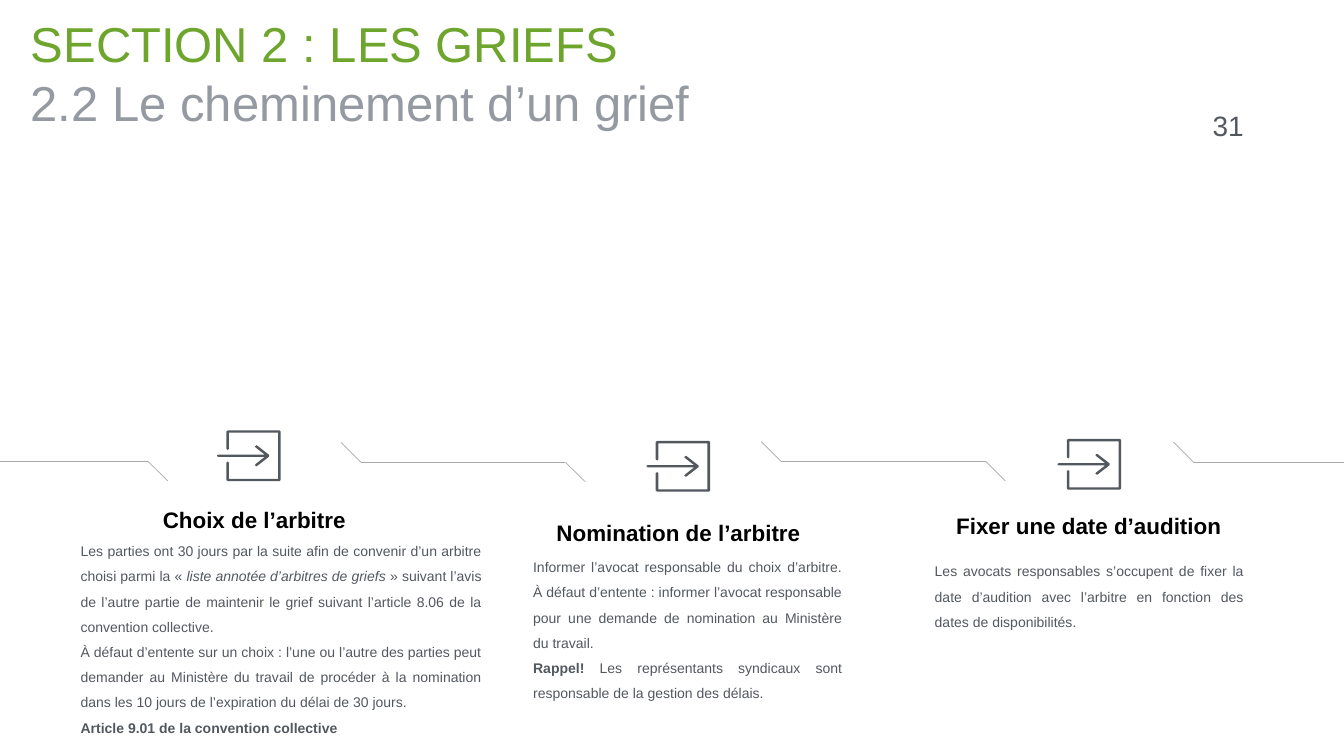
from pptx import Presentation
from pptx.dml.color import RGBColor
from pptx.enum.shapes import MSO_CONNECTOR
from pptx.enum.text import MSO_ANCHOR, MSO_AUTO_SIZE, PP_ALIGN
from pptx.oxml.ns import qn
from pptx.util import Cm, Pt
from lxml.etree import SubElement

GREEN, GREY, DARK, BLACK, RULE = "6DA52D", "959AA2", "53585F", "000000", "A6AAA9"
INSET = 0.15

TITLE = [("SECTION 2 : LES GRIEFS", GREEN), ("2.2 Le cheminement d’un grief", GREY)]
PAGE_NUMBER = "31"

STEPS = [
    {
        "heading": "Choix de l’arbitre",
        "heading_box": (4.88, 24.84, 15.88, 2.64),
        "details_box": (3.91, 28.58, 20.52, 6.86),
        "icon": (10.95, 22.97),
        "details": [
            [("Les parties ont 30 jours par la suite afin de convenir d’un arbitre choisi parmi la « ", ""),
             ("liste annotée d’arbitres de griefs ", "italic"),
             ("» suivant l’avis de l’autre partie de maintenir le grief suivant "
              "l’article 8.06 de la convention collective.", "")],
            [("À défaut d’entente sur un choix : l’une ou l’autre des parties peut demander "
              "au Ministère du travail de procéder à la nomination dans les 10 jours "
              "de l’expiration du délai de 30 jours.", "")],
            [("Article 9.01 de la convention collective", "bold")],
        ],
    },
    {
        "heading": "Nomination de l’arbitre",
        "heading_box": (26.26, 25.5, 15.88, 2.64),
        "details_box": (26.72, 28.52, 15.88, 6.05),
        "icon": (32.59, 23.5),
        "details": [
            [("Informer l’avocat responsable du choix d’arbitre. À défaut d’entente : "
              "informer l’avocat responsable pour une demande de nomination "
              "au Ministère du travail.", "")],
            [("Rappel! ", "bold"),
             ("Les représentants syndicaux sont responsable de la gestion des délais.", "")],
        ],
    },
    {
        "heading": "Fixer une date d’audition",
        "heading_box": (46.94, 25.17, 15.88, 2.64),
        "details_box": (46.96, 27.74, 15.88, 4.22),
        "icon": (53.31, 23.4),
        "details": [
            [("Les avocats responsables s’occupent de fixer la date d’audition avec "
              "l’arbitre en fonction des dates de disponibilités.", "")],
        ],
    },
]

TIMELINE = [
    [(0, 23.25), (7.46, 23.25), (8.46, 24.24)],
    [(17.19, 22.3), (18.19, 23.3), (28.5, 23.3), (29.5, 24.28)],
    [(38.36, 22.25), (39.36, 23.25), (49.68, 23.25), (50.67, 24.24)],
    [(59.14, 22.28), (60.14, 23.28), (67.74, 23.28)],
]

ARROW_TOP = [(0, -0.03), (0.08, -0.06), (2.39, -0.06), (1.93, -0.42), (1.9, -0.47),
             (1.98, -0.53), (2.03, -0.5), (2.62, -0.04)]
FRAME_TOP = [(3.2, -1.22), (3.14, -1.28), (0.53, -1.28), (0.46, -1.22), (0.46, -0.35),
             (0.53, -0.29), (0.59, -0.35), (0.59, -1.16), (3.07, -1.16)]


def color(hex_string):
    return RGBColor.from_string(hex_string)


def place(shape, box):
    shape.left, shape.top, shape.width, shape.height = map(Cm, box)


def set_frame(shape, anchor, inset, wrap=True):
    frame = shape.text_frame
    frame.word_wrap = wrap
    frame.auto_size = MSO_AUTO_SIZE.NONE
    frame.vertical_anchor = anchor
    frame.margin_left = frame.margin_right = Cm(inset)
    frame.margin_top = frame.margin_bottom = Cm(inset)
    return frame


def write(frame, paragraphs, size, hex_string, align, spacing=1.0, bold=None):
    for index, runs in enumerate(paragraphs):
        paragraph = frame.add_paragraph() if index else frame.paragraphs[0]
        paragraph.alignment = align
        paragraph.line_spacing = spacing
        paragraph.space_before = Pt(0)
        paragraph.font.name = "Arial"
        paragraph.font.size = Pt(size)
        paragraph.font.bold = bold
        paragraph.font.color.rgb = color(hex_string)
        properties = paragraph._p.get_or_add_pPr()
        properties.set("marL", "0")
        properties.set("indent", "0")
        properties.insert_element_before(
            properties.makeelement(qn("a:buNone"), {}), "a:tabLst", "a:defRPr", "a:extLst")
        for words, style in runs:
            run = paragraph.add_run()
            run.text = words
            run.font.name = "Arial"
            run.font.size = Pt(size)
            run.font.color.rgb = color(hex_string)
            run.font.bold = style == "bold" or bool(bold)
            run.font.italic = style == "italic"


def add_text(slide, box, words, size, hex_string, spacing=1.0, bold=None, wrap=True):
    text = slide.shapes.add_textbox(*map(Cm, box))
    frame = set_frame(text, MSO_ANCHOR.MIDDLE, INSET, wrap)
    write(frame, [[(words, "")]], size, hex_string, PP_ALIGN.CENTER, spacing, bold)


def add_timeline(slide):
    for points in TIMELINE:
        for start, end in zip(points, points[1:]):
            segment = slide.shapes.add_connector(MSO_CONNECTOR.STRAIGHT, *map(Cm, start + end))
            segment.line.color.rgb = color(RULE)
            segment.line.width = Pt(1)
            SubElement(segment._element.spPr, qn("a:effectLst"))


def add_icon(slide, left, axis):
    outlines = []
    for top in (ARROW_TOP, FRAME_TOP):
        mirrored = [(x, -y) for x, y in reversed(top)]
        outlines.append([(Cm(left + x), Cm(axis + y)) for x, y in top + mirrored])
    arrow, frame = outlines
    builder = slide.shapes.build_freeform(*arrow[0])
    builder.add_line_segments(arrow[1:])
    builder.move_to(*frame[0])
    builder.add_line_segments(frame[1:])
    icon = builder.convert_to_shape()
    icon.shadow.inherit = False
    icon.fill.solid()
    icon.fill.fore_color.rgb = color(DARK)
    icon.line.fill.background()


def main():
    deck = Presentation()
    deck.slide_width, deck.slide_height = Cm(67.74), Cm(38.1)
    slide = deck.slides.add_slide(deck.slide_layouts.get_by_name("Comparison"))
    title, *bodies, spare = slide.placeholders
    spare._element.getparent().remove(spare._element)

    add_timeline(slide)
    place(title, (1.3, 0.43, 41.94, 6.25))
    title_frame = set_frame(title, MSO_ANCHOR.TOP, 0.25)
    write(title_frame, [[(words, "")] for words, _ in TITLE], 70, GREEN, PP_ALIGN.LEFT, bold=False)
    for paragraph, (_, hex_string) in zip(title_frame.paragraphs, TITLE):
        paragraph.font.color.rgb = color(hex_string)
        paragraph.runs[0].font.color.rgb = color(hex_string)

    add_text(slide, (60.96, 4.88, 1.88, 1.98), PAGE_NUMBER, 40, DARK, 1.5, wrap=False)
    for step, details in zip(STEPS, bodies):
        add_text(slide, step["heading_box"], step["heading"], 32, BLACK, bold=True)
        place(details, step["details_box"])
        write(set_frame(details, MSO_ANCHOR.MIDDLE, INSET), step["details"], 20, DARK,
              PP_ALIGN.JUSTIFY, 1.5, bold=False)
        add_icon(slide, *step["icon"])
    deck.save("out.pptx")


if __name__ == "__main__":
    main()
